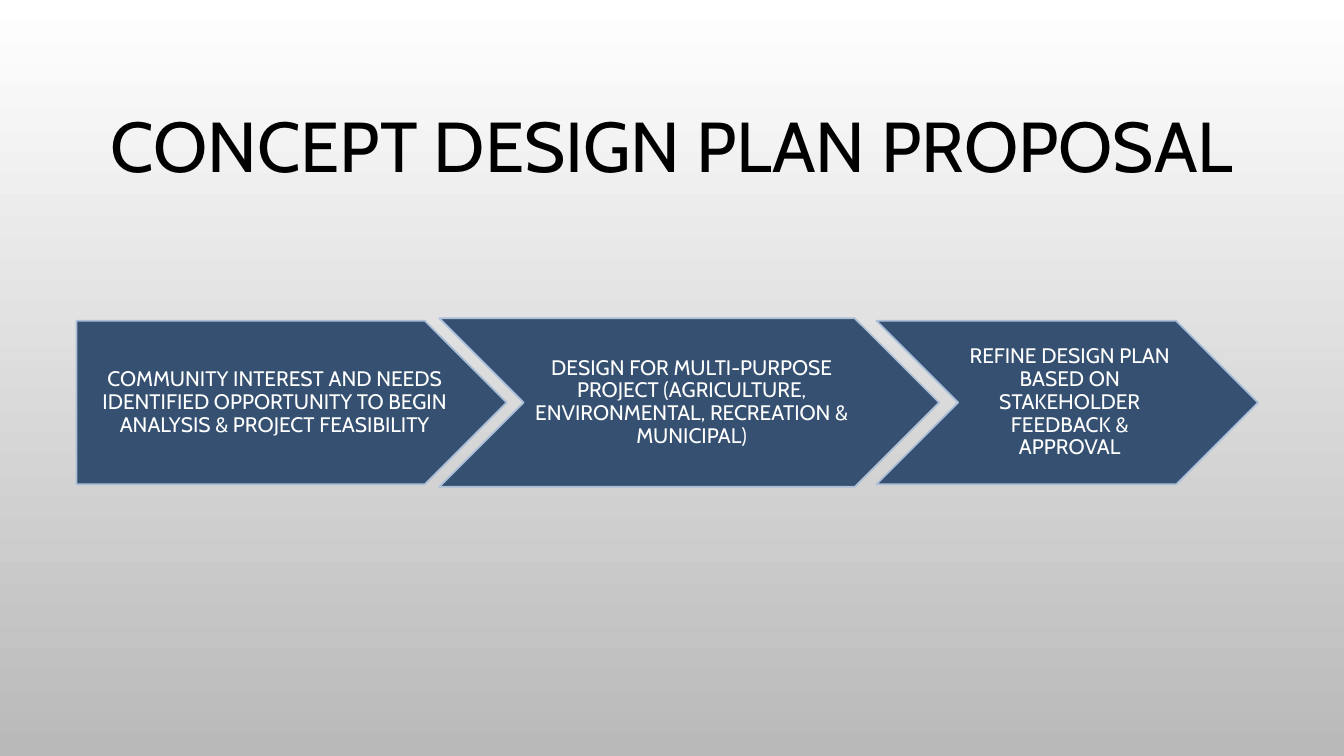
from dataclasses import dataclass

from pptx import Presentation
from pptx.dml.color import RGBColor
from pptx.enum.shapes import MSO_SHAPE
from pptx.enum.text import MSO_ANCHOR, MSO_AUTO_SIZE, PP_ALIGN
from pptx.util import Inches, Pt

PLATE, CHEVRON = MSO_SHAPE.PENTAGON, MSO_SHAPE.CHEVRON
MIDDLE, CENTER, NO_FIT = MSO_ANCHOR.MIDDLE, PP_ALIGN.CENTER, MSO_AUTO_SIZE.NONE
TITLE_ONLY = 5
WIDE, HIGH = 13.33, 7.5


@dataclass(frozen=True)
class Theme:
    font: str = "Cabin"
    ink: str = "000000"
    paper: str = "FFFFFF"
    shade: str = "B9B9B9"
    step: str = "355071"
    edge: str = "AABED7"
    head: float = 50.4
    body: float = 15
    line: float = 1.25


THEME = Theme()

# Kind, left and width as shares of the row, height as a share, left inset, text
STEPS = [
    (PLATE, 0, 0.364, 0.97, 0.09,
     "COMMUNITY INTEREST AND NEEDS IDENTIFIED OPPORTUNITY TO BEGIN "
     "ANALYSIS & PROJECT FEASIBILITY"),
    (CHEVRON, 0.307, 0.423, 1, 0.07,
     "DESIGN FOR MULTI-PURPOSE PROJECT (AGRICULTURE, ENVIRONMENTAL, "
     "RECREATION & MUNICIPAL)"),
    (CHEVRON, 0.677, 0.323, 0.97, 0.07,
     "REFINE DESIGN PLAN BASED ON STAKEHOLDER FEEDBACK & APPROVAL"),
]


def color(code):
    return RGBColor.from_string(code)


def write(shape, text, size, ink, inset=(0, 0, 0, 0)):
    """Set centred text; inset is left, top, right, bottom in inches."""
    frame = shape.text_frame
    frame.word_wrap = True
    frame.auto_size = NO_FIT
    frame.vertical_anchor = MIDDLE
    (frame.margin_left, frame.margin_top,
     frame.margin_right, frame.margin_bottom) = map(Inches, inset)
    para = frame.paragraphs[0]
    para.alignment = CENTER
    para.line_spacing = 0.9
    run = para.add_run()
    run.text = text
    font = run.font
    font.name, font.size = THEME.font, Pt(size)
    font.color.rgb = color(ink)


def back(slide):
    fill = slide.background.fill
    fill.gradient()
    fill.gradient_angle = 270
    for stop, code, spot in zip(fill.gradient_stops, (THEME.paper, THEME.shade), (0, 1)):
        stop.color.rgb = color(code)
        stop.position = spot


def title(slide, box, text):
    shape = slide.shapes.title
    shape.left, shape.top, shape.width, shape.height = map(Inches, box)
    write(shape, text, THEME.head, THEME.ink)


def flow(slide, box, steps):
    """Place the steps along the row, each centred on its height."""
    left, top, width, height = box
    group = slide.shapes.add_group_shape()
    for kind, start, span, tall, pad, text in steps:
        shape = group.shapes.add_shape(
            kind, Inches(left + start * width),
            Inches(top + (1 - tall) / 2 * height),
            Inches(span * width), Inches(tall * height))
        shape.shadow.inherit = False
        shape.fill.solid()
        shape.fill.fore_color.rgb = color(THEME.step)
        shape.line.color.rgb = color(THEME.edge)
        shape.line.width = Pt(THEME.line)
        write(shape, text, THEME.body, THEME.paper, (pad, 0.04, 0.02, 0.04))


def main():
    deck = Presentation()
    deck.slide_width, deck.slide_height = Inches(WIDE), Inches(HIGH)
    slide = deck.slides.add_slide(deck.slide_layouts[TITLE_ONLY])
    back(slide)
    title(slide, (0.075 * WIDE, 0.11 * HIGH, 0.85 * WIDE, 0.175 * HIGH),
          "CONCEPT DESIGN PLAN PROPOSAL")
    flow(slide, (0.057 * WIDE, 0.421 * HIGH, 0.879 * WIDE, 0.223 * HIGH), STEPS)
    deck.save("out.pptx")


if __name__ == "__main__":
    main()
